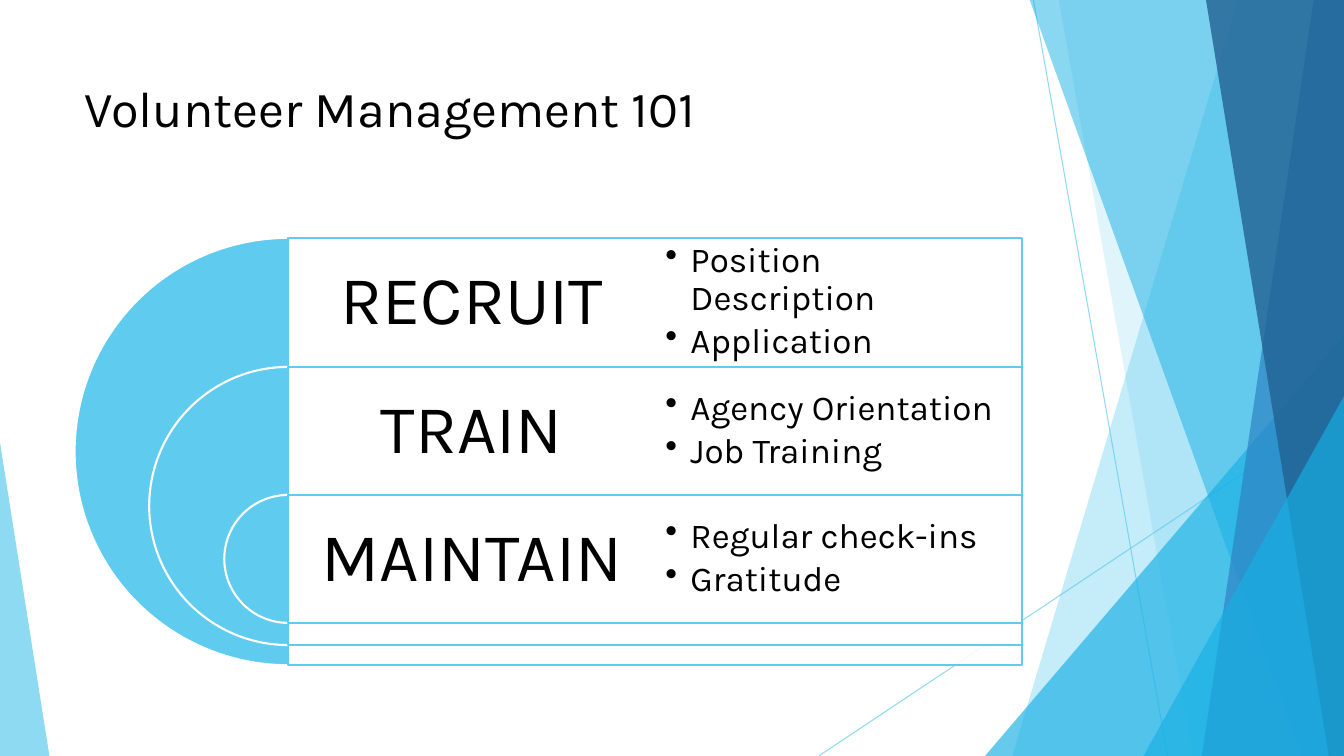
from dataclasses import dataclass

from pptx import Presentation
from pptx.dml.color import RGBColor
from pptx.enum.shapes import MSO_CONNECTOR, MSO_SHAPE
from pptx.enum.text import MSO_ANCHOR, PP_ALIGN
from pptx.oxml.ns import qn
from pptx.util import Inches, Pt
from lxml import etree

SKY = RGBColor(0x5F, 0xCB, 0xEF)
CYAN = RGBColor(0x17, 0xB0, 0xE4)
BLUE = RGBColor(0x2E, 0x83, 0xC3)
NAVY = RGBColor(0x22, 0x62, 0x92)
WHITE = RGBColor(0xFF, 0xFF, 0xFF)
BLACK = RGBColor(0, 0, 0)

PIE, RECT, TRIANGLE = MSO_SHAPE.PIE, MSO_SHAPE.RECTANGLE, MSO_SHAPE.ISOSCELES_TRIANGLE
STRAIGHT = MSO_CONNECTOR.STRAIGHT
TOP, MIDDLE = MSO_ANCHOR.TOP, MSO_ANCHOR.MIDDLE
LEFT, CENTER = PP_ALIGN.LEFT, PP_ALIGN.CENTER

FONT = "Karla"
WIDTH, HEIGHT = 13.33, 7.5
PANEL_LEFT, PANEL_WIDTH, ROW_HEIGHT = 2.86, 7.28, 1.27


@dataclass
class Band:
    """Facet running from the top edge to the bottom, beside the right margin."""
    top_x: float
    bottom_x: float
    color: RGBColor
    alpha: int


@dataclass
class Corner:
    """Triangle standing on the bottom edge, with its tip at one side."""
    left: float
    top: float
    width: float
    tip: float
    color: RGBColor
    alpha: int


@dataclass
class Stage:
    top: float
    diameter: float
    label: str
    details: list[str]


RAYS = [(10.25, 0, 11.58, HEIGHT), (WIDTH, 4.03, 8.12, HEIGHT)]
FACETS = [
    Band(12.28, 10.04, SKY, 36),
    Band(10.5, 11.83, SKY, 20),
    Corner(9.77, 3.33, 3.56, 1, CYAN, 66),
    Band(10.21, 12.91, CYAN, 50),
    Band(13.03, 11.92, BLUE, 70),
    Band(11.96, 13.18, NAVY, 80),
    Corner(11.34, 3.93, 1.99, 1, CYAN, 66),
    Corner(0, 4.39, 0.49, 0, SKY, 70),
]
STAGES = [
    Stage(2.36, 4.24, "RECRUIT", ["Position Description", "Application"]),
    Stage(3.64, 2.76, "TRAIN", ["Agency Orientation", "Job Training"]),
    Stage(4.91, 1.27, "MAINTAIN", ["Regular check-ins", "Gratitude"]),
]


def set_alpha(sp, percent: int) -> None:
    for color in sp._element.spPr.iter(qn("a:srgbClr")):
        etree.SubElement(color, qn("a:alpha")).set("val", str(percent * 1000))


def paint(sp, color: RGBColor, alpha: int = 100) -> None:
    sp.shadow.inherit = False
    sp.fill.solid()
    sp.fill.fore_color.rgb = color
    if alpha < 100:
        set_alpha(sp, alpha)
    sp.line.fill.background()


def outline(sp, color: RGBColor, width: float) -> None:
    sp.line.color.rgb = color
    sp.line.width = Pt(width)


def add_preset(s, kind, left: float, top: float, width: float, height: float):
    return s.shapes.add_shape(kind, Inches(left), Inches(top), Inches(width), Inches(height))


def add_ray(s, x1: float, y1: float, x2: float, y2: float) -> None:
    ray = s.shapes.add_connector(STRAIGHT, Inches(x1), Inches(y1), Inches(x2), Inches(y2))
    outline(ray, SKY, 0.75)
    set_alpha(ray, 70)
    etree.SubElement(ray._element.spPr, qn("a:effectLst"))


def add_facet(s, facet: Band | Corner) -> None:
    if isinstance(facet, Band):
        top = Inches(-0.01)
        right, bottom = Inches(WIDTH), Inches(HEIGHT)
        outline_path = s.shapes.build_freeform(Inches(facet.top_x), top)
        outline_path.add_line_segments(
            [(right, top), (right, bottom), (Inches(facet.bottom_x), bottom)], close=True)
        sp = outline_path.convert_to_shape()
    else:
        sp = add_preset(s, TRIANGLE, facet.left, facet.top, facet.width, HEIGHT - facet.top)
        sp.adjustments[0] = facet.tip
    paint(sp, facet.color, facet.alpha)


def add_text(s, left: float, top: float, width: float, height: float, lines: list[str],
             size: float, anchor=MIDDLE, align=LEFT, inset: float = 0.1, spacing: float = 0.9):
    box = s.shapes.add_textbox(Inches(left), Inches(top), Inches(width), Inches(height))
    tf = box.text_frame
    tf.word_wrap = True
    tf.vertical_anchor = anchor
    tf.margin_left = tf.margin_right = Inches(inset)
    tf.margin_top = tf.margin_bottom = Inches(inset)
    tf.text = "\n".join(lines)
    for p in tf.paragraphs:
        p.alignment = align
        p.line_spacing = spacing
        font = p.runs[0].font
        font.name, font.size, font.color.rgb = FONT, Pt(size), BLACK
    return tf


def add_bullets(tf) -> None:
    for p in tf.paragraphs:
        p.space_after = Pt(4)
        pPr = p._p.get_or_add_pPr()
        pPr.set("marL", str(Inches(0.25)))
        pPr.set("indent", str(Inches(-0.25)))
        etree.SubElement(pPr, qn("a:buChar")).set("char", "•")


def add_stage(s, stage: Stage) -> None:
    pie = add_preset(s, PIE, PANEL_LEFT - stage.diameter / 2, stage.top,
                     stage.diameter, stage.diameter)
    pie.adjustments[0], pie.adjustments[1] = 54, 162  # left half: 90 to 270 degrees
    paint(pie, SKY)
    outline(pie, WHITE, 1.5)
    panel = add_preset(s, RECT, PANEL_LEFT, stage.top, PANEL_WIDTH, stage.diameter)
    paint(panel, WHITE, 90)
    outline(panel, SKY, 1.5)
    add_text(s, PANEL_LEFT, stage.top, PANEL_WIDTH / 2, ROW_HEIGHT, [stage.label], 49,
             align=CENTER, inset=0.2)


def main() -> None:
    prs = Presentation()
    prs.slide_width, prs.slide_height = Inches(WIDTH), Inches(HEIGHT)
    s = prs.slides.add_slide(prs.slide_layouts[6])

    # Faceted background
    for ray in RAYS:
        add_ray(s, *ray)
    for facet in FACETS:
        add_facet(s, facet)

    # Title
    add_text(s, 0.74, 0.67, 9.4, 1.44, ["Volunteer Management 101"], 36,
             anchor=TOP, spacing=1.0)

    # Nested stages, then their details on top
    for stage in STAGES:
        add_stage(s, stage)
    for stage in STAGES:
        add_bullets(add_text(s, PANEL_LEFT + PANEL_WIDTH / 2, stage.top, PANEL_WIDTH / 2,
                             ROW_HEIGHT, stage.details, 25))

    prs.save("out.pptx")


if __name__ == "__main__":
    main()
